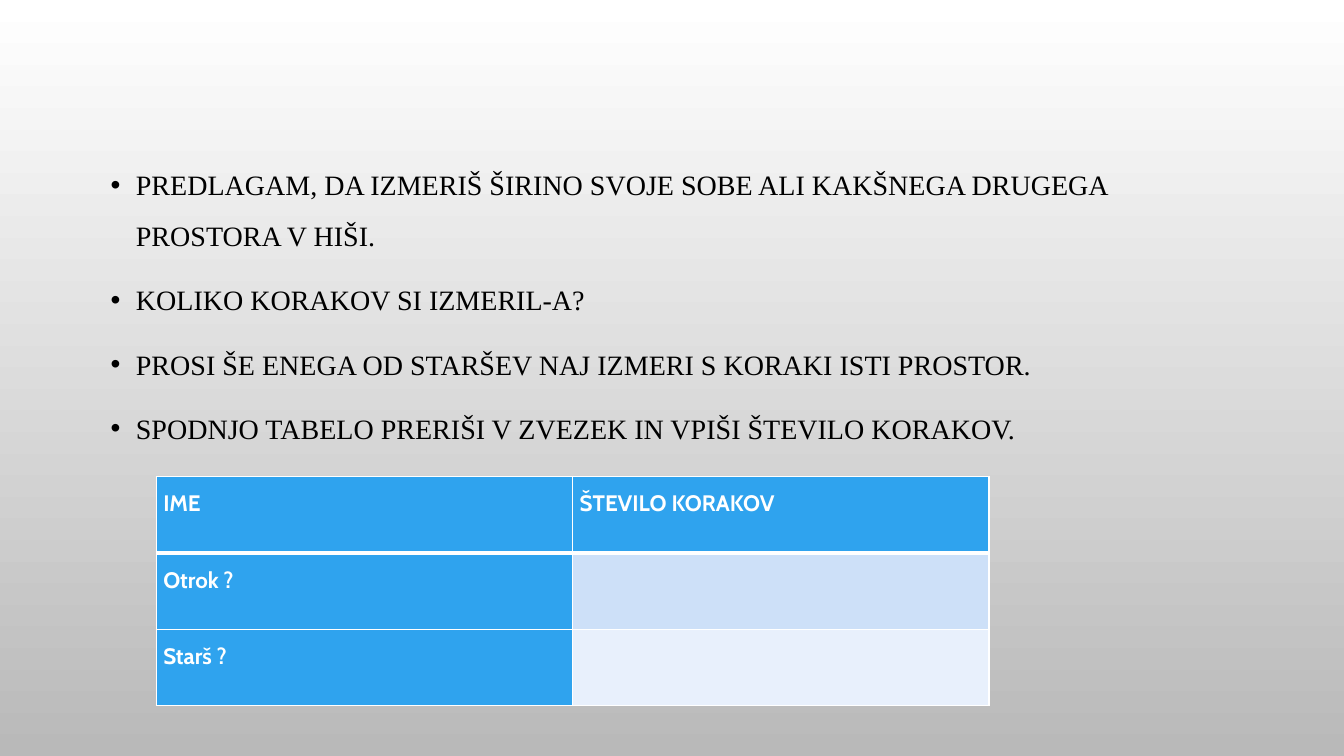
"""Build a slide with step-measuring instructions and a results table."""
from lxml import etree
from pptx import Presentation
from pptx.dml.color import RGBColor
from pptx.enum.text import MSO_ANCHOR
from pptx.oxml.ns import qn
from pptx.util import Inches, Pt

TOP = MSO_ANCHOR.TOP
BLACK, WHITE, BLUE = "000000", "FFFFFF", "2FA3EE"
INSTRUCTIONS = [
    "PREDLAGAM, DA IZMERIŠ ŠIRINO SVOJE SOBE ALI KAKŠNEGA DRUGEGA PROSTORA V HIŠI.",
    "KOLIKO KORAKOV SI IZMERIL-A?",
    "PROSI ŠE ENEGA OD STARŠEV NAJ IZMERI S KORAKI ISTI PROSTOR.",
    "SPODNJO TABELO PRERIŠI V ZVEZEK IN VPIŠI ŠTEVILO KORAKOV.",
]
STEP_ROWS = [("IME", "ŠTEVILO KORAKOV"), ("Otrok ?", ""), ("Starš ?", "")]
ROW_FILLS = [(BLUE, BLUE), (BLUE, "CDE0F8"), (BLUE, "E8F0FC")]


def color(value):
    return RGBColor.from_string(value)


def write(paragraph, text, *, font, size, ink, bold=False, before=0, spacing=1.5):
    paragraph.line_spacing = spacing
    paragraph.space_before = Pt(before)
    if text:
        run = paragraph.add_run()
        run.text = text
        run.font.name = font
        run.font.size = Pt(size)
        run.font.bold = bold
        run.font.color.rgb = color(ink)


def add_bullet(paragraph, ink, indent):
    properties = paragraph._p.get_or_add_pPr()
    properties.set("marL", str(Inches(indent)))
    properties.set("indent", str(-Inches(indent)))
    bullet_color = etree.SubElement(properties, qn("a:buClr"))
    etree.SubElement(bullet_color, qn("a:srgbClr"), val=ink)
    etree.SubElement(properties, qn("a:buFont"), typeface="Arial")
    etree.SubElement(properties, qn("a:buChar"), char="•")


def add_border(cell, side, width):
    properties = cell._tc.get_or_add_tcPr()
    line = etree.SubElement(properties, qn(f"a:ln{side}"), w=str(Pt(width)))
    fill = etree.SubElement(line, qn("a:solidFill"))
    etree.SubElement(fill, qn("a:srgbClr"), val=WHITE)


class LessonSlide:
    def __init__(self, slide):
        self.slide = slide
        self.body_style = {"font": "Times New Roman", "size": 20, "ink": BLACK}
        self.table_style = {"font": "Cabin", "size": 16, "ink": WHITE, "bold": True}

    def background(self, start, end):
        fill = self.slide.background.fill
        fill.gradient()
        fill.gradient_angle = 270
        for stop, shade in zip(fill.gradient_stops, (start, end)):
            stop.color.rgb = color(shade)

    def bullets(self, items, left, top, width, height):
        box = self.slide.shapes.add_textbox(
            Inches(left), Inches(top), Inches(width), Inches(height))
        frame = box.text_frame
        frame.word_wrap = True
        frame.vertical_anchor = TOP
        for index, item in enumerate(items):
            paragraph = frame.add_paragraph() if index else frame.paragraphs[0]
            add_bullet(paragraph, BLACK, 0.25)
            write(paragraph, item, before=10 if index else 0, **self.body_style)

    def table(self, rows, fills, left, top, width, height):
        table = self.slide.shapes.add_table(
            len(rows), len(rows[0]), Inches(left), Inches(top),
            Inches(width), Inches(height)).table
        table.horz_banding = False
        for r, (labels, shades) in enumerate(zip(rows, fills)):
            for c, (label, shade) in enumerate(zip(labels, shades)):
                cell = table.cell(r, c)
                cell.margin_left = cell.margin_right = Inches(0.07)
                cell.margin_top = cell.margin_bottom = 0
                widths = {"L": 1, "R": 1, "T": 3 if r == 1 else 1, "B": 3 if r == 0 else 1}
                for side, thickness in widths.items():
                    add_border(cell, side, thickness)
                cell.fill.solid()
                cell.fill.fore_color.rgb = color(shade)
                write(cell.text_frame.paragraphs[0], label, **self.table_style)


def main():
    deck = Presentation()
    deck.slide_width, deck.slide_height = Inches(13.33), Inches(7.5)
    lesson = LessonSlide(deck.slides.add_slide(deck.slide_layouts[6]))
    lesson.background(WHITE, "B9B9B9")
    lesson.bullets(INSTRUCTIONS, 1, 1.45, 11.33, 4.89)
    lesson.table(STEP_ROWS, ROW_FILLS, 1.55, 4.73, 8.26, 2.27)
    deck.save("out.pptx")


if __name__ == "__main__":
    main()
